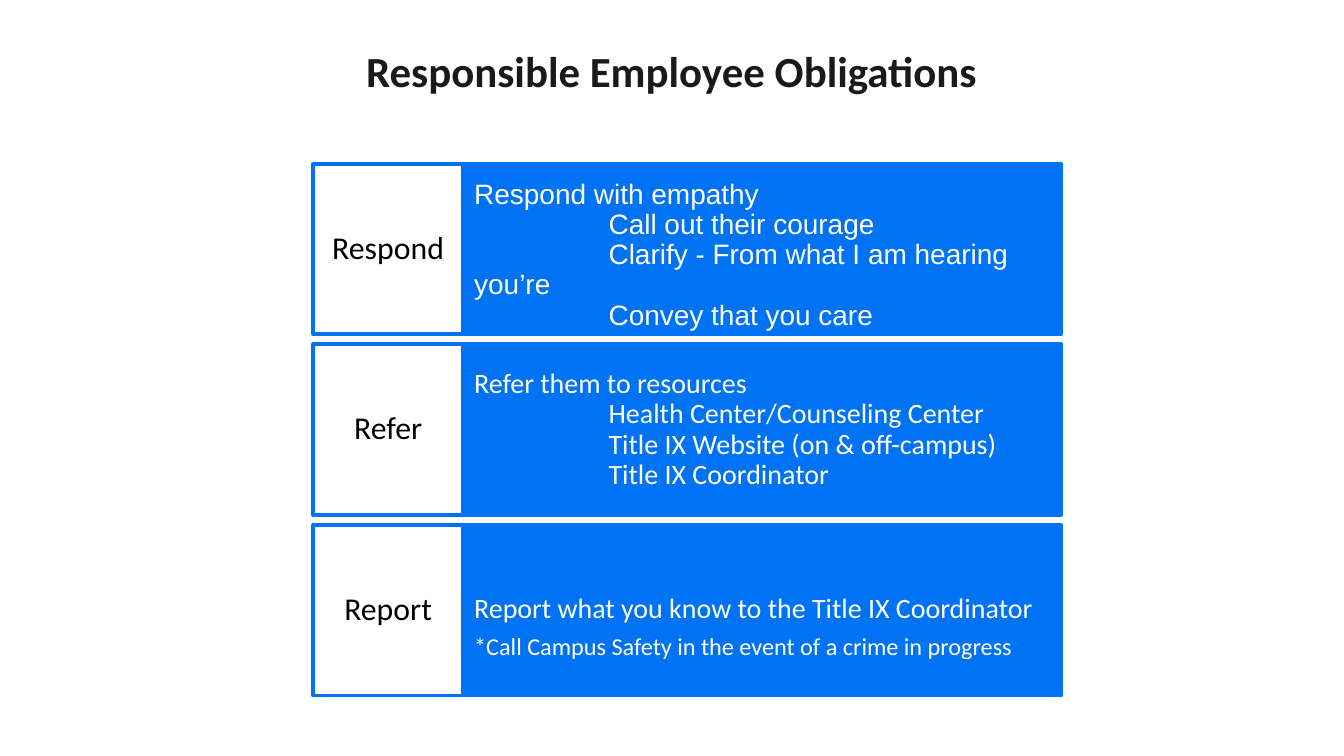
from dataclasses import dataclass

from pptx import Presentation
from pptx.dml.color import RGBColor
from pptx.enum import shapes, text
from pptx.util import Pt

BLUE, WHITE, BLACK, CHARCOAL = "0073F4", "FFFFFF", "000000", "1A1A1A"
LABEL_LEFT, LABEL_WIDTH = 167.9, 80.1
DETAIL_LEFT, DETAIL_WIDTH = 248.2, 320.4
FIRST_TOP, ROW_HEIGHT, ROW_PITCH = 87.7, 91.4, 96.8
STEP_INDENT = 72


@dataclass
class Line:
    words: str
    size: float = 15
    space_before: float = 0
    indent: float = 0


@dataclass
class Obligation:
    label: str
    lines: list[Line]
    top_inset: float
    font: str = "Calibri"


def step(words: str) -> Line:
    return Line(words, indent=STEP_INDENT)


OBLIGATIONS = [
    Obligation("Respond", [
        Line("Respond with empathy"),
        step("Call out their courage"),
        step("Clarify - From what I am hearing you’re"),
        step("Convey that you care"),
    ], 8.7, "Arial"),
    Obligation("Refer", [
        Line("Refer them to resources"),
        step("Health Center/Counseling Center"),
        step("Title IX Website (on & off-campus)"),
        step("Title IX Coordinator"),
    ], 13.4),
    Obligation("Report", [
        Line("Report what you know to the Title IX Coordinator"),
        Line("*Call Campus Safety in the event of a crime in progress", 13, 5.4),
    ], 37.2),
]


def rgb(value: str) -> RGBColor:
    return RGBColor.from_string(value)


def set_insets(frame, side: float, top: float, bottom: float) -> None:
    frame.word_wrap = True
    frame.margin_left = frame.margin_right = Pt(side)
    frame.margin_top, frame.margin_bottom = Pt(top), Pt(bottom)


def write(paragraph, line: Line, font: str, color: str, align,
          bold: bool = False, spacing: float = 0.9) -> None:
    """Fill a paragraph; the indent moves its first line only."""
    paragraph.text = line.words
    paragraph.alignment = align
    paragraph.line_spacing = spacing
    paragraph.space_before = Pt(line.space_before)
    properties = paragraph._p.get_or_add_pPr()
    properties.set("marL", "0")
    properties.set("indent", str(Pt(line.indent)))
    for run in paragraph.runs:
        run.font.name, run.font.size, run.font.bold = font, Pt(line.size), bold
        run.font.color.rgb = rgb(color)


def add_box(slide, left: float, top: float, width: float, fill: str):
    """Draw one blue-edged cell of a row and return its text frame."""
    box = slide.shapes.add_shape(shapes.MSO_SHAPE.RECTANGLE, Pt(left), Pt(top),
                                 Pt(width), Pt(ROW_HEIGHT))
    box.shadow.inherit = False
    box.fill.solid()
    box.fill.fore_color.rgb = rgb(fill)
    box.line.color.rgb = rgb(BLUE)
    box.line.width = Pt(2)
    return box.text_frame


def add_obligation(slide, obligation: Obligation, top: float) -> None:
    detail = add_box(slide, DETAIL_LEFT, top, DETAIL_WIDTH, BLUE)
    set_insets(detail, 5.8, obligation.top_inset, 0)
    detail.vertical_anchor = text.MSO_ANCHOR.TOP
    detail.text = "\n".join(line.words for line in obligation.lines)
    for paragraph, line in zip(detail.paragraphs, obligation.lines):
        write(paragraph, line, obligation.font, WHITE, text.PP_ALIGN.LEFT)

    label = add_box(slide, LABEL_LEFT, top, LABEL_WIDTH, WHITE)
    set_insets(label, 4.3, 8, 8)
    label.vertical_anchor = text.MSO_ANCHOR.MIDDLE
    write(label.paragraphs[0], Line(obligation.label, 17), "Calibri", BLACK,
          text.PP_ALIGN.CENTER)


def add_title(slide, words: str) -> None:
    heading = slide.shapes.add_textbox(Pt(57.3), Pt(16.6), Pt(605.5), Pt(56.2)).text_frame
    set_insets(heading, 7.2, 7.2, 7.2)
    write(heading.paragraphs[0], Line(words, 23), "Calibri", CHARCOAL,
          text.PP_ALIGN.CENTER, bold=True, spacing=1.0)


def main() -> None:
    deck = Presentation()
    deck.slide_width, deck.slide_height = Pt(720), Pt(405)
    slide = deck.slides.add_slide(deck.slide_layouts[6])
    add_title(slide, "Responsible Employee Obligations")
    for row, obligation in enumerate(OBLIGATIONS):
        add_obligation(slide, obligation, FIRST_TOP + row * ROW_PITCH)
    deck.save("out.pptx")


if __name__ == "__main__":
    main()
